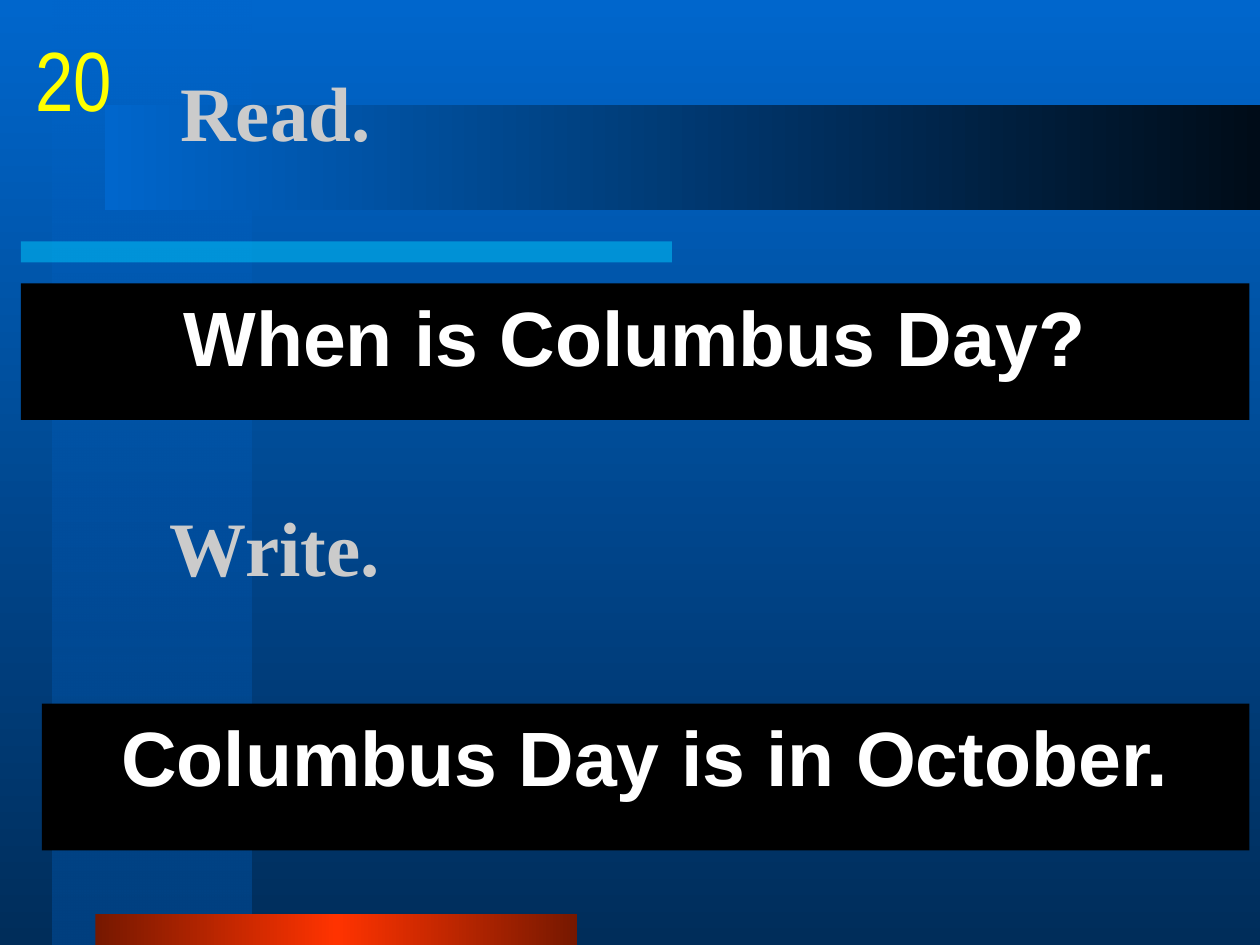
from dataclasses import dataclass
from typing import Optional

from lxml import etree
from pptx import Presentation
from pptx import util as u
from pptx.dml.color import RGBColor
from pptx.enum import shapes, text
from pptx.oxml.ns import qn

Pt = u.Pt

SKY = RGBColor(0x00, 0x66, 0xCC)
NAVY = RGBColor(0x00, 0x2D, 0x5A)
DEEP = RGBColor(0x00, 0x40, 0x80)
NIGHT = RGBColor(0x00, 0x0C, 0x18)
CYAN = RGBColor(0x00, 0xCC, 0xFF)
MAROON = RGBColor(0x76, 0x18, 0x00)
RED = RGBColor(0xFF, 0x33, 0x00)
BLACK = RGBColor(0x00, 0x00, 0x00)
WHITE = RGBColor(0xFF, 0xFF, 0xFF)
SILVER = RGBColor(0xCB, 0xCB, 0xCB)
YELLOW = RGBColor(0xFF, 0xFF, 0x00)


@dataclass(frozen=True)
class Box:
    left: float
    top: float
    width: float
    height: float

    def lengths(self) -> tuple:
        return tuple(Pt(n) for n in (self.left, self.top, self.width, self.height))


@dataclass(frozen=True)
class Stop:
    position: int
    color: RGBColor
    opacity: int = 100


@dataclass(frozen=True)
class Band:
    box: Box
    stops: tuple
    angle: int = 0


@dataclass(frozen=True)
class Line:
    wording: str
    box: Box
    font: dict
    paragraph: dict
    frame: dict
    backing: Optional[RGBColor] = None


def apply(target, values: dict) -> None:
    for name, value in values.items():
        setattr(target, name, value)


def add_color(parent, stop: Stop) -> None:
    color = etree.SubElement(parent, qn("a:srgbClr"), val=str(stop.color))
    if stop.opacity < 100:
        etree.SubElement(color, qn("a:alpha"), val=str(stop.opacity * 1000))


def paint(fill, holder, stops: tuple, angle: int) -> None:
    if len(stops) == 1:
        fill.solid()
        fill.fore_color.rgb = stops[0].color
        solid = holder.find(qn("a:solidFill"))
        solid.clear()
        add_color(solid, stops[0])
        return
    fill.gradient()
    fill.gradient_angle = angle
    ramp = holder.find(qn("a:gradFill")).find(qn("a:gsLst"))
    ramp.clear()
    for stop in stops:
        add_color(etree.SubElement(ramp, qn("a:gs"), pos=str(stop.position * 1000)), stop)


def add_band(slide, band: Band) -> None:
    bar = slide.shapes.add_shape(shapes.MSO_SHAPE.RECTANGLE, *band.box.lengths())
    bar.shadow.inherit = False
    bar.line.fill.background()
    paint(bar.fill, bar._element.spPr, band.stops, band.angle)


def add_line(slide, line: Line) -> None:
    holder = slide.shapes.add_textbox(*line.box.lengths())
    if line.backing is not None:
        holder.fill.solid()
        holder.fill.fore_color.rgb = line.backing
    apply(holder.text_frame, line.frame)
    paragraph = holder.text_frame.paragraphs[0]
    apply(paragraph, line.paragraph)
    run = paragraph.add_run()
    run.text = line.wording
    font = dict(line.font)
    run.font.color.rgb = font.pop("color")
    apply(run.font, font)


PROMPT = dict(
    font=dict(name="Times New Roman", size=Pt(44), bold=True, color=SILVER),
    paragraph=dict(alignment=text.PP_ALIGN.LEFT),
    frame=dict(word_wrap=True, vertical_anchor=text.MSO_ANCHOR.MIDDLE),
)
SENTENCE = dict(
    font=dict(name="Arial", size=Pt(44), bold=True, color=WHITE),
    paragraph=dict(alignment=text.PP_ALIGN.CENTER, space_before=Pt(4.5)),
    frame=dict(word_wrap=True, vertical_anchor=text.MSO_ANCHOR.TOP),
    backing=BLACK,
)
POINTS = dict(
    font=dict(name="Arial Narrow", size=Pt(48), color=YELLOW),
    paragraph=dict(alignment=text.PP_ALIGN.CENTER),
    frame=dict(word_wrap=False, vertical_anchor=text.MSO_ANCHOR.TOP),
)

BANDS = (
    Band(Box(30, 0, 114, 540), (Stop(0, SKY, 50), Stop(100, DEEP)), 270),
    Band(Box(12, 138, 372, 12), (Stop(0, CYAN, 50),)),
    Band(Box(54.5, 522, 275.5, 18), (Stop(0, MAROON), Stop(50, RED), Stop(100, MAROON))),
    Band(Box(60, 60, 660, 60), (Stop(0, SKY), Stop(100, NIGHT))),
)
LINES = (
    Line("Read.", Box(96, 18, 612, 90), **PROMPT),
    Line("When is Columbus Day?", Box(12, 162, 702, 78), **SENTENCE),
    Line("Write.", Box(90, 252, 612, 120), **PROMPT),
    Line("Columbus Day is in October.", Box(24, 402, 690, 84), **SENTENCE),
    Line("20", Box(12, 12, 60, 60), **POINTS),
)


def main() -> None:
    deck = Presentation()
    deck.slide_width, deck.slide_height = Pt(720), Pt(540)
    slide = deck.slides.add_slide(deck.slide_layouts[6])
    backdrop = slide.background.fill
    paint(backdrop, slide._element.find(".//" + qn("p:bgPr")), (Stop(0, SKY), Stop(100, NAVY)), 270)
    for band in BANDS:
        add_band(slide, band)
    for line in LINES:
        add_line(slide, line)
    deck.save("out.pptx")


if __name__ == "__main__":
    main()
